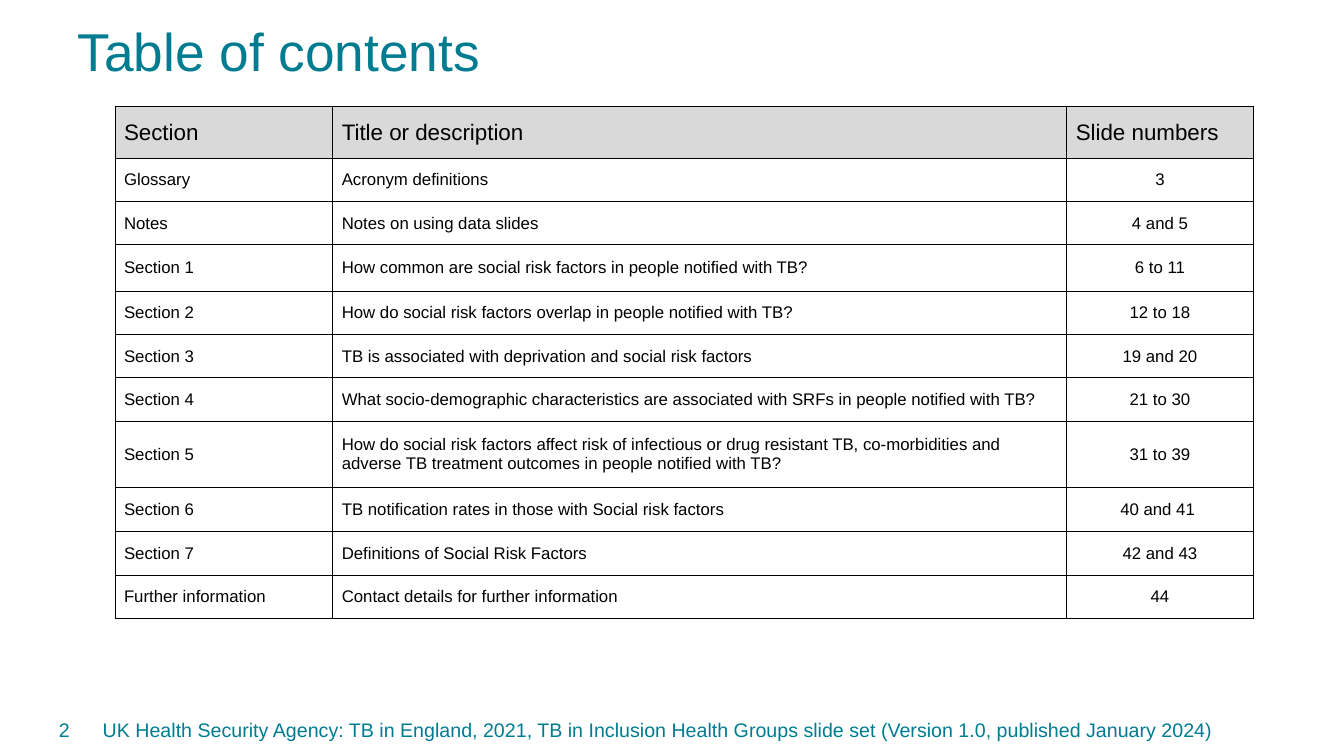
from lxml.etree import SubElement
from pptx import Presentation
from pptx.dml.color import RGBColor
from pptx.enum.text import MSO_ANCHOR, MSO_AUTO_SIZE, PP_ALIGN
from pptx.oxml.ns import qn
from pptx.util import Inches, Pt

TEAL = RGBColor(0x00, 0x7C, 0x91)
BLACK = RGBColor(0x00, 0x00, 0x00)
WHITE = RGBColor(0xFF, 0xFF, 0xFF)
HEADER_GREY = RGBColor(0xD9, 0xD9, 0xD9)
FONT = "Arial"

FOOTER_TOP, FOOTER_HEIGHT = 7.04, 0.4
TABLE_LEFT, TABLE_TOP = 1.14, 1.06
COLUMN_WIDTHS = (2.16, 7.28, 1.85)
ROW_HEIGHT = 0.43
SPECIAL_ROW_HEIGHTS = {0: 0.51, 3: 0.46, 7: 0.66, 9: 0.44}

CONTENTS = (
    ("Section", "Title or description", "Slide numbers"),
    ("Glossary", "Acronym definitions", "3"),
    ("Notes", "Notes on using data slides", "4 and 5"),
    ("Section 1", "How common are social risk factors in people notified with TB?", "6 to 11"),
    ("Section 2", "How do social risk factors overlap in people notified with TB?", "12 to 18"),
    ("Section 3", "TB is associated with deprivation and social risk factors", "19 and 20"),
    ("Section 4", "What socio-demographic characteristics are associated with SRFs "
     "in people notified with TB?", "21 to 30"),
    ("Section 5", "How do social risk factors affect risk of infectious or drug resistant TB, "
     "co-morbidities and adverse TB treatment outcomes in people notified with TB?", "31 to 39"),
    ("Section 6", "TB notification rates in those with Social risk factors", "40 and 41 "),
    ("Section 7", "Definitions of Social Risk Factors", "42 and 43"),
    ("Further information", "Contact details for further information", "44"),
)


def write(frame, text, size, color, align=PP_ALIGN.LEFT):
    frame.text = text
    frame.word_wrap = True
    para = frame.paragraphs[0]
    para.alignment = align
    font = para.runs[0].font
    font.name, font.size, font.bold = FONT, Pt(size), False
    font.color.rgb = color
    return para


def add_title(page, text):
    title = page.shapes.title
    title.left, title.top = Inches(0.67), Inches(0.2)
    title.width, title.height = Inches(12.17), Inches(1.06)
    frame = title.text_frame
    write(frame, text, 38, TEAL).line_spacing = 0.9
    frame.auto_size = MSO_AUTO_SIZE.NONE
    frame.vertical_anchor = MSO_ANCHOR.TOP


def add_footer_text(page, left, width, text, align=PP_ALIGN.LEFT):
    box = page.shapes.add_textbox(
        Inches(left), Inches(FOOTER_TOP), Inches(width), Inches(FOOTER_HEIGHT))
    box.text_frame.vertical_anchor = MSO_ANCHOR.MIDDLE
    write(box.text_frame, text, 14, TEAL, align)


def outline_cell(cell):
    """Draw a thin black line on all four sides; borders must precede the fill."""
    properties = cell._tc.get_or_add_tcPr()
    for index, side in enumerate(("a:lnL", "a:lnR", "a:lnT", "a:lnB")):
        line = SubElement(properties, qn(side), w=str(Pt(0.75)))
        fill = SubElement(line, qn("a:solidFill"))
        SubElement(fill, qn("a:srgbClr"), val=str(BLACK))
        properties.insert(index, line)


def format_cell(cell, text, is_header, is_number):
    cell.vertical_anchor = MSO_ANCHOR.MIDDLE
    cell.margin_left = cell.margin_right = Inches(0.09)
    cell.margin_top = cell.margin_bottom = Inches(0.05)
    cell.fill.solid()
    cell.fill.fore_color.rgb = HEADER_GREY if is_header else WHITE
    centred = is_number and not is_header
    write(cell.text_frame, text, 16 if is_header else 12, BLACK,
          PP_ALIGN.CENTER if centred else PP_ALIGN.LEFT)
    outline_cell(cell)


def add_contents_table(page):
    heights = [SPECIAL_ROW_HEIGHTS.get(row, ROW_HEIGHT) for row in range(len(CONTENTS))]
    table = page.shapes.add_table(
        len(heights), len(COLUMN_WIDTHS), Inches(TABLE_LEFT), Inches(TABLE_TOP),
        Inches(sum(COLUMN_WIDTHS)), Inches(sum(heights))).table
    table.first_row = table.horz_banding = False
    for column, width in zip(table.columns, COLUMN_WIDTHS):
        column.width = Inches(width)
    for row_index, (row, height) in enumerate(zip(table.rows, heights)):
        row.height = Inches(height)
        for column_index, text in enumerate(CONTENTS[row_index]):
            format_cell(row.cells[column_index], text, row_index == 0, column_index == 2)


def main():
    deck = Presentation()
    deck.slide_width, deck.slide_height = Inches(13.33), Inches(7.5)
    page = deck.slides.add_slide(deck.slide_layouts[5])
    add_title(page, "Table of contents")
    add_footer_text(page, 0.92, 11.92,
                    "UK Health Security Agency: TB in England, 2021, TB in Inclusion Health "
                    "Groups slide set (Version 1.0, published January 2024)")
    add_footer_text(page, 0.14, 0.65, "2", PP_ALIGN.RIGHT)
    add_contents_table(page)
    deck.save("out.pptx")


if __name__ == "__main__":
    main()
